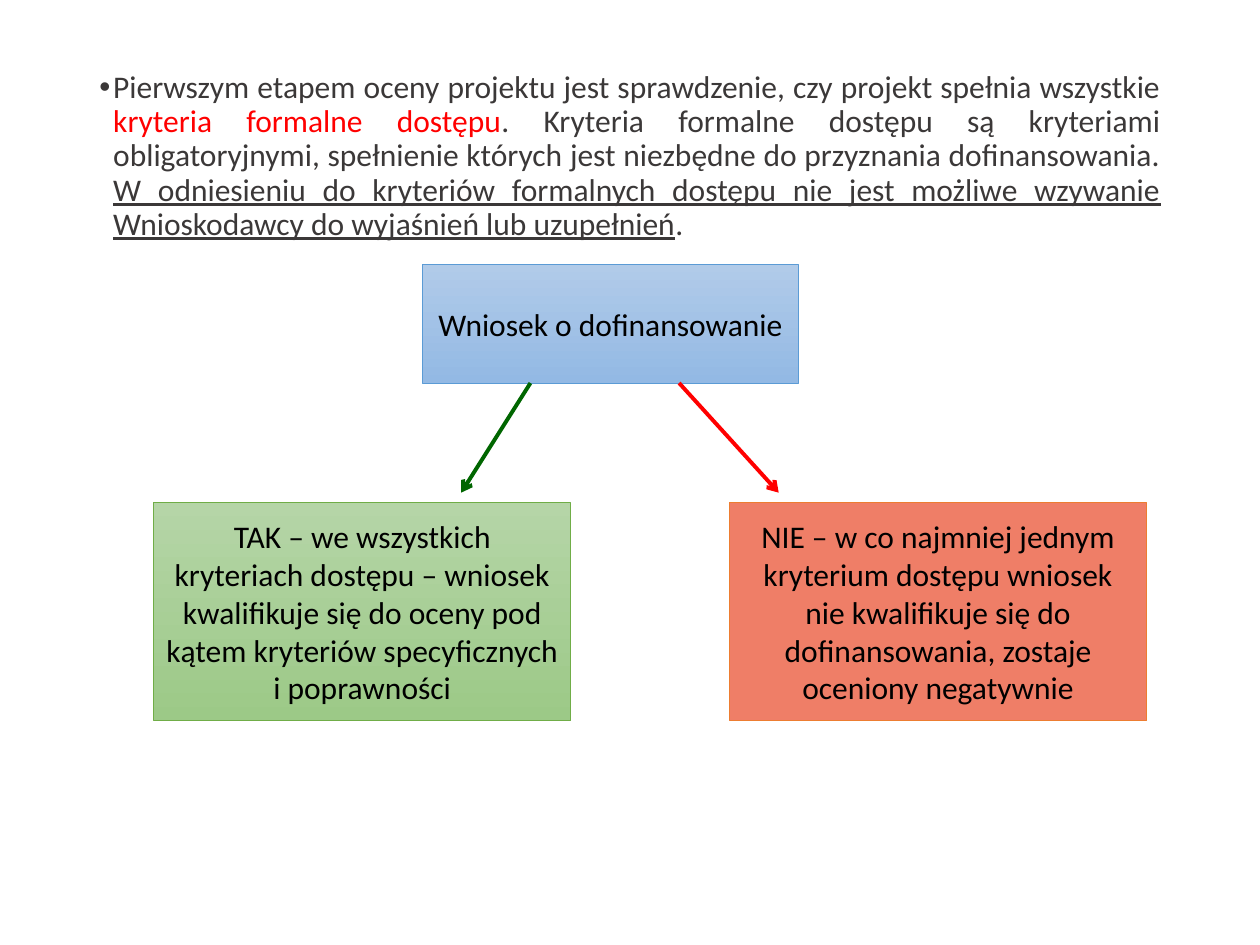
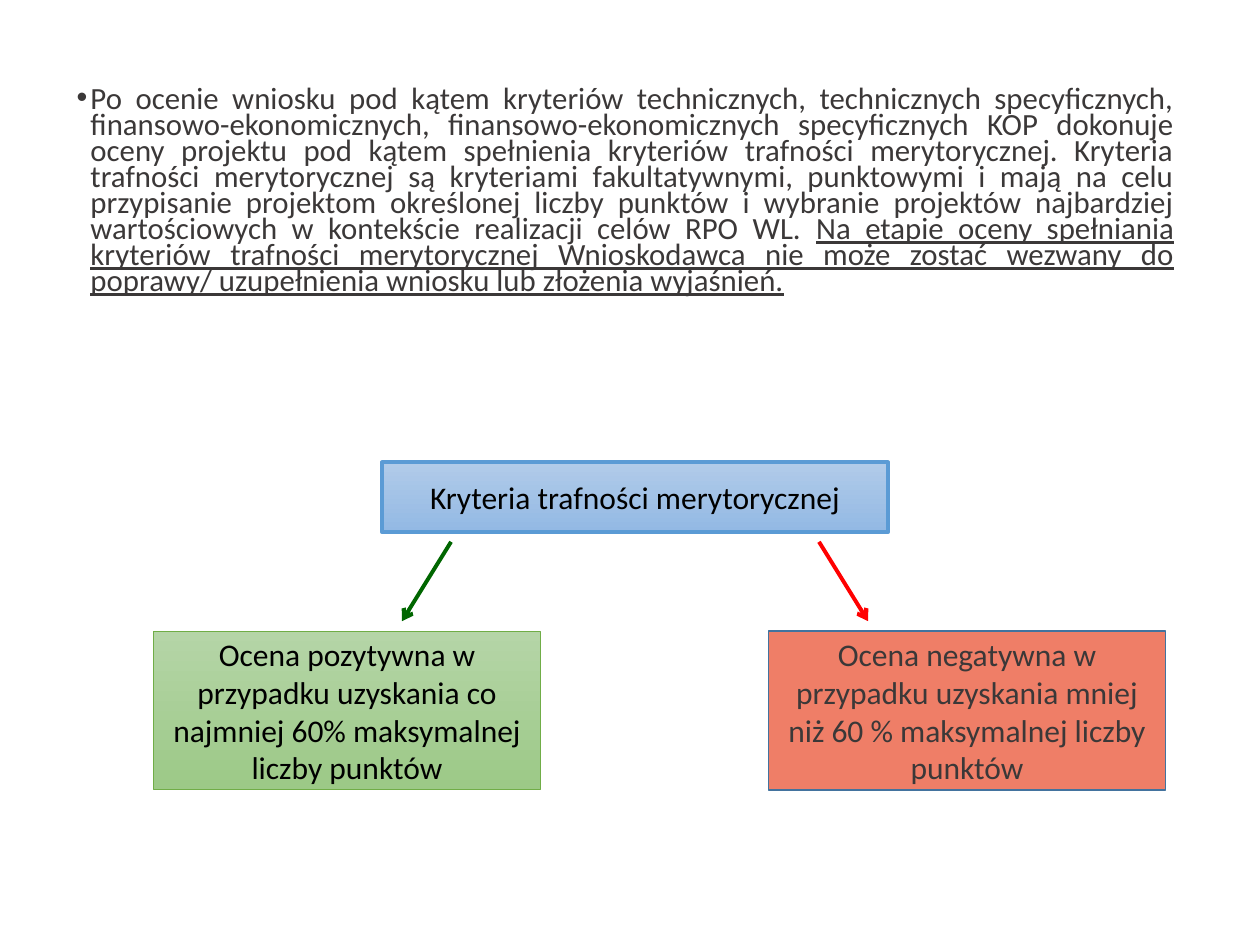
from dataclasses import dataclass

from lxml import etree
from pptx import Presentation
from pptx.dml.color import RGBColor
from pptx.enum.shapes import MSO_CONNECTOR, MSO_SHAPE
from pptx.enum.text import MSO_ANCHOR, PP_ALIGN
from pptx.oxml.ns import qn
from pptx.util import Inches, Pt

RECT, STRAIGHT = MSO_SHAPE.RECTANGLE, MSO_CONNECTOR.STRAIGHT
CENTER, JUSTIFY = PP_ALIGN.CENTER, PP_ALIGN.JUSTIFY
TOP, MIDDLE = MSO_ANCHOR.TOP, MSO_ANCHOR.MIDDLE
BLANK = 6


@dataclass(frozen=True)
class Theme:
    font: str = "Calibri"
    size: float = 18
    dense_size: float = 17.6
    indent: float = 0.11
    thin: float = 0.5
    thick: float = 2.25
    ink: str = "3B3838"
    black: str = "000000"
    yes: str = "006600"
    no: str = "FF0000"
    blue: tuple = ("B1CBE9", "93B9E4")
    blue_edge: str = "5B9BD5"
    green: tuple = ("B5D5A7", "9CC987")
    green_edge: str = "70AD47"
    coral: tuple = ("EF7E67",)
    orange_edge: str = "ED7D31"
    navy_edge: str = "43739E"


class Deck:
    def __init__(self, theme):
        self.theme = theme
        self.prs = Presentation()
        self.prs.slide_width, self.prs.slide_height = Inches(10), Inches(7.5)
        self.slide = None

    def new_slide(self):
        self.slide = self.prs.slides.add_slide(self.prs.slide_layouts[BLANK])

    def add_run(self, p, text, color, size, underline=False):
        r = p.add_run()
        r.text = text
        style = {"name": self.theme.font, "size": Pt(size), "underline": underline}
        for name, value in style.items():
            setattr(r.font, name, value)
        r.font.color.rgb = RGBColor.from_string(color)

    def bullet(self, box, runs, size, spacing):
        """Justified bullet paragraph; runs are (text, color, underline)."""
        tf = self.slide.shapes.add_textbox(*map(Inches, box)).text_frame
        tf.word_wrap, tf.vertical_anchor = True, TOP
        p = tf.paragraphs[0]
        p.alignment, p.line_spacing = JUSTIFY, spacing
        pPr = p._p.get_or_add_pPr()
        indent = Inches(self.theme.indent)
        pPr.set("marL", str(indent))
        pPr.set("indent", str(-indent))
        etree.SubElement(pPr, qn("a:buFont"), typeface="Arial")
        etree.SubElement(pPr, qn("a:buChar"), char="•")
        for text, color, underline in runs:
            self.add_run(p, text, color, size, underline)

    def block(self, box, text, fill, edge, width, color):
        """Flowchart box; two fill colors make a top-to-bottom gradient."""
        sp = self.slide.shapes.add_shape(RECT, *map(Inches, box))
        sp.shadow.inherit = False
        if len(fill) == 1:
            sp.fill.solid()
            sp.fill.fore_color.rgb = RGBColor.from_string(fill[0])
        else:
            sp.fill.gradient()
            sp.fill.gradient_angle = 270
            for stop, stop_color in zip(sp.fill.gradient_stops, fill):
                stop.color.rgb = RGBColor.from_string(stop_color)
        sp.line.color.rgb = RGBColor.from_string(edge)
        sp.line.width = Pt(width)
        tf = sp.text_frame
        tf.word_wrap, tf.vertical_anchor = True, MIDDLE
        p = tf.paragraphs[0]
        p.alignment = CENTER
        self.add_run(p, text, color, self.theme.size)

    def arrow(self, start, end, color):
        cxn = self.slide.shapes.add_connector(STRAIGHT, *map(Inches, start + end))
        cxn.line.color.rgb = RGBColor.from_string(color)
        cxn.line.width = Pt(self.theme.thick)
        etree.SubElement(cxn.line._get_or_add_ln(), qn("a:tailEnd"), type="arrow")
        etree.SubElement(cxn._element.spPr, qn("a:effectLst"))


def formal_access_slide(deck):
    t = deck.theme
    deck.new_slide()
    deck.bullet((0.69, 0.52, 8.62, 6.23), [
        ("Pierwszym etapem oceny projektu jest sprawdzenie, czy projekt spełnia "
         "wszystkie ", t.ink, False),
        ("kryteria formalne dostępu", t.no, False),
        (". Kryteria formalne dostępu są kryteriami obligatoryjnymi, spełnienie "
         "których jest niezbędne do przyznania dofinansowania. ", t.ink, False),
        ("W odniesieniu do kryteriów formalnych dostępu nie jest możliwe wzywanie "
         "Wnioskodawcy do wyjaśnień lub uzupełnień", t.ink, True),
        (".", t.ink, False),
    ], t.size, 0.9)
    deck.block((3.35, 2.1, 2.99, 0.94), "Wniosek o dofinansowanie",
               t.blue, t.blue_edge, t.thin, t.black)
    deck.block((1.22, 3.99, 3.31, 1.73),
               "TAK – we wszystkich kryteriach dostępu – wniosek kwalifikuje się do "
               "oceny pod kątem kryteriów specyficznych i poprawności",
               t.green, t.green_edge, t.thin, t.black)
    deck.block((5.79, 3.99, 3.31, 1.73),
               "NIE – w co najmniej jednym kryterium dostępu wniosek nie kwalifikuje "
               "się do dofinansowania, zostaje oceniony negatywnie",
               t.coral, t.orange_edge, t.thin, t.black)
    deck.arrow((4.21, 3.04), (3.66, 3.91), t.yes)
    deck.arrow((5.39, 3.04), (6.18, 3.91), t.no)


def merit_slide(deck):
    t = deck.theme
    deck.new_slide()
    deck.bullet((0.51, 0.66, 8.91, 1.76), [
        ("Po ocenie wniosku pod kątem kryteriów technicznych, technicznych "
         "specyficznych, finansowo-ekonomicznych, finansowo-ekonomicznych "
         "specyficznych KOP dokonuje oceny projektu pod kątem spełnienia kryteriów "
         "trafności merytorycznej. Kryteria trafności merytorycznej są kryteriami "
         "fakultatywnymi, punktowymi i mają na celu przypisanie projektom określonej "
         "liczby punktów i wybranie projektów najbardziej wartościowych "
         "w kontekście realizacji celów RPO WL. ", t.ink, False),
        ("Na etapie oceny spełniania kryteriów trafności merytorycznej Wnioskodawca "
         "nie może zostać wezwany do poprawy/ uzupełnienia wniosku lub złożenia "
         "wyjaśnień.", t.ink, True),
    ], t.dense_size, 0.7)
    deck.block((3.03, 3.67, 4.02, 0.55), "Kryteria trafności merytorycznej",
               t.blue, t.blue_edge, t.thick, t.black)
    deck.arrow((6.5, 4.3), (6.89, 4.93), t.no)
    deck.arrow((3.58, 4.3), (3.19, 4.93), t.yes)
    deck.block((1.22, 5.01, 3.07, 1.26),
               "Ocena pozytywna w przypadku uzyskania co najmniej 60% maksymalnej "
               "liczby punktów", t.green, t.green_edge, t.thin, t.black)
    deck.block((6.1, 5.01, 3.15, 1.26),
               "Ocena negatywna w przypadku uzyskania mniej niż 60 % maksymalnej "
               "liczby punktów", t.coral, t.navy_edge, 1, t.ink)


def main():
    deck = Deck(Theme())
    formal_access_slide(deck)
    merit_slide(deck)
    deck.prs.save("out.pptx")


if __name__ == "__main__":
    main()
